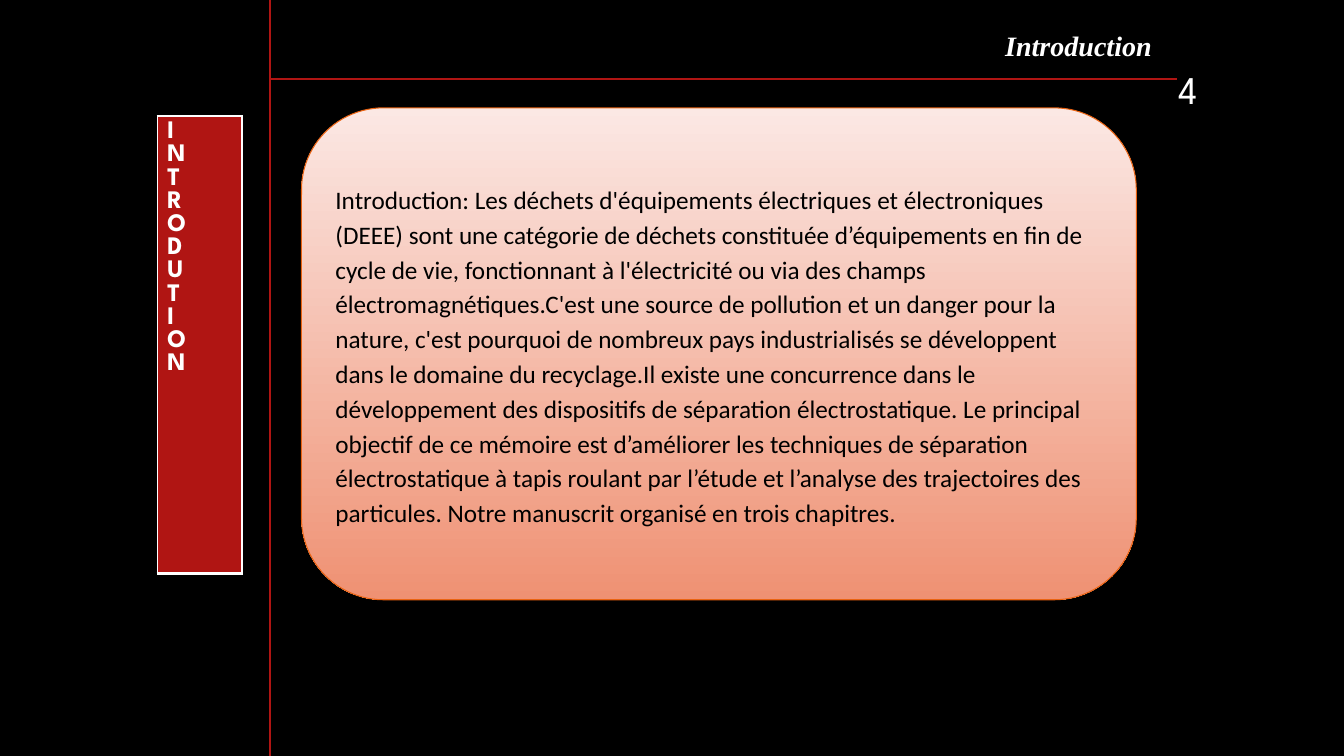
import pptx
import pptx.util
import pptx.dml.color
import pptx.enum.shapes
import pptx.enum.text
import pptx.oxml
import pptx.oxml.ns
from pptx.util import Inches

BLACK, WHITE, RED = "000000", "FFFFFF", "B01513"


def rgb(value):
    return pptx.dml.color.RGBColor.from_string(value)


def add_run(p, text, size, font, color, bold=False, italic=False):
    r = p.add_run()
    r.text = text
    r.font.size = pptx.util.Pt(size)
    r.font.name = font
    r.font.color.rgb = rgb(color)
    r.font.bold = bold
    r.font.italic = italic


prs = pptx.Presentation()
prs.slide_width, prs.slide_height = Inches(13.33), Inches(7.5)
s = prs.slides.add_slide(prs.slide_layouts[5])
s.background.fill.solid()
s.background.fill.fore_color.rgb = rgb(BLACK)

# Title
title = s.shapes.title
title.left, title.top = Inches(9.87), Inches(0.23)
title.width, title.height = Inches(1.72), Inches(0.44)
tf = title.text_frame
tf.word_wrap = True
tf.auto_size = pptx.enum.text.MSO_AUTO_SIZE.SHAPE_TO_FIT_TEXT
tf.vertical_anchor = pptx.enum.text.MSO_ANCHOR.TOP
p = tf.paragraphs[0]
p.alignment = pptx.enum.text.PP_ALIGN.LEFT
add_run(p, "Introduction", 20, "Times New Roman", WHITE, bold=True, italic=True)

# Page number
sp = s.shapes.add_textbox(Inches(11.32), Inches(0.32), Inches(0.92), Inches(0.84))
tf = sp.text_frame
tf.word_wrap = True
tf.vertical_anchor = pptx.enum.text.MSO_ANCHOR.BOTTOM
p = tf.paragraphs[0]
p.alignment = pptx.enum.text.PP_ALIGN.CENTER
add_run(p, "4", 28, "League Spartan", WHITE)

# Introduction panel
sp = s.shapes.add_shape(pptx.enum.shapes.MSO_SHAPE.ROUNDED_RECTANGLE,
                        Inches(2.99), Inches(1.07), Inches(8.28), Inches(4.88))
sp.shadow.inherit = False
sp.fill.gradient()
sp.fill.gradient_angle = 270
for stop, color in zip(sp.fill.gradient_stops, ("FBE8E4", "EF9173")):
    stop.color.rgb = rgb(color)
sp.line.color.rgb = rgb("EA6312")
sp.line.width = pptx.util.Pt(0.75)
tf = sp.text_frame
tf.word_wrap = True
tf.vertical_anchor = pptx.enum.text.MSO_ANCHOR.MIDDLE
p = tf.paragraphs[0]
p.alignment = pptx.enum.text.PP_ALIGN.LEFT
p.line_spacing = 1.15
p.space_after = pptx.util.Pt(10)
add_run(p, (
    "Introduction: Les déchets d'équipements électriques et électroniques (DEEE) "
    "sont une catégorie de déchets constituée d’équipements en fin de cycle de vie, "
    "fonctionnant à l'électricité ou via des champs électromagnétiques."
    "C'est une source de pollution et un danger pour la nature, c'est pourquoi de "
    "nombreux pays industrialisés se développent dans le domaine du recyclage."
    "Il existe une concurrence dans le développement des dispositifs de séparation "
    "électrostatique. Le principal objectif de ce mémoire est d’améliorer les "
    "techniques de séparation électrostatique à tapis roulant par l’étude et "
    "l’analyse des trajectoires des particules. Notre manuscrit organisé en trois "
    "chapitres."), 18, "Calibri", BLACK)

# Red rules
for x1, y1, x2, y2 in ((2.68, 0.78, 11.67, 0.78), (2.68, 0, 2.68, 7.5)):
    rule = s.shapes.add_connector(pptx.enum.shapes.MSO_CONNECTOR.STRAIGHT,
                                  Inches(x1), Inches(y1), Inches(x2), Inches(y2))
    rule.line.color.rgb = rgb(RED)
    rule.line.width = pptx.util.Pt(1.5)
    rule._element.spPr.append(pptx.oxml.parse_xml(
        f"<a:effectLst {pptx.oxml.ns.nsdecls('a')}/>"))

# Side banner with one letter per line
table = s.shapes.add_table(1, 1, Inches(1.56), Inches(1.15),
                           Inches(0.84), Inches(4.54)).table
table.first_row = False
table.horz_banding = False
cell = table.cell(0, 0)
cell.fill.solid()
cell.fill.fore_color.rgb = rgb(RED)
for i, letter in enumerate("INTRODUTION"):
    p = cell.text_frame.add_paragraph() if i else cell.text_frame.paragraphs[0]
    add_run(p, letter, 18, "League Spartan", WHITE, bold=True)
tcPr = cell._tc.get_or_add_tcPr()
for i, (side, width) in enumerate((("L", 1), ("R", 1), ("T", 1), ("B", 3))):
    tcPr.insert(i, pptx.oxml.parse_xml(
        f'<a:ln{side} {pptx.oxml.ns.nsdecls("a")} w="{pptx.util.Pt(width)}">'
        f'<a:solidFill><a:srgbClr val="{WHITE}"/></a:solidFill></a:ln{side}>'))

prs.save("out.pptx")
